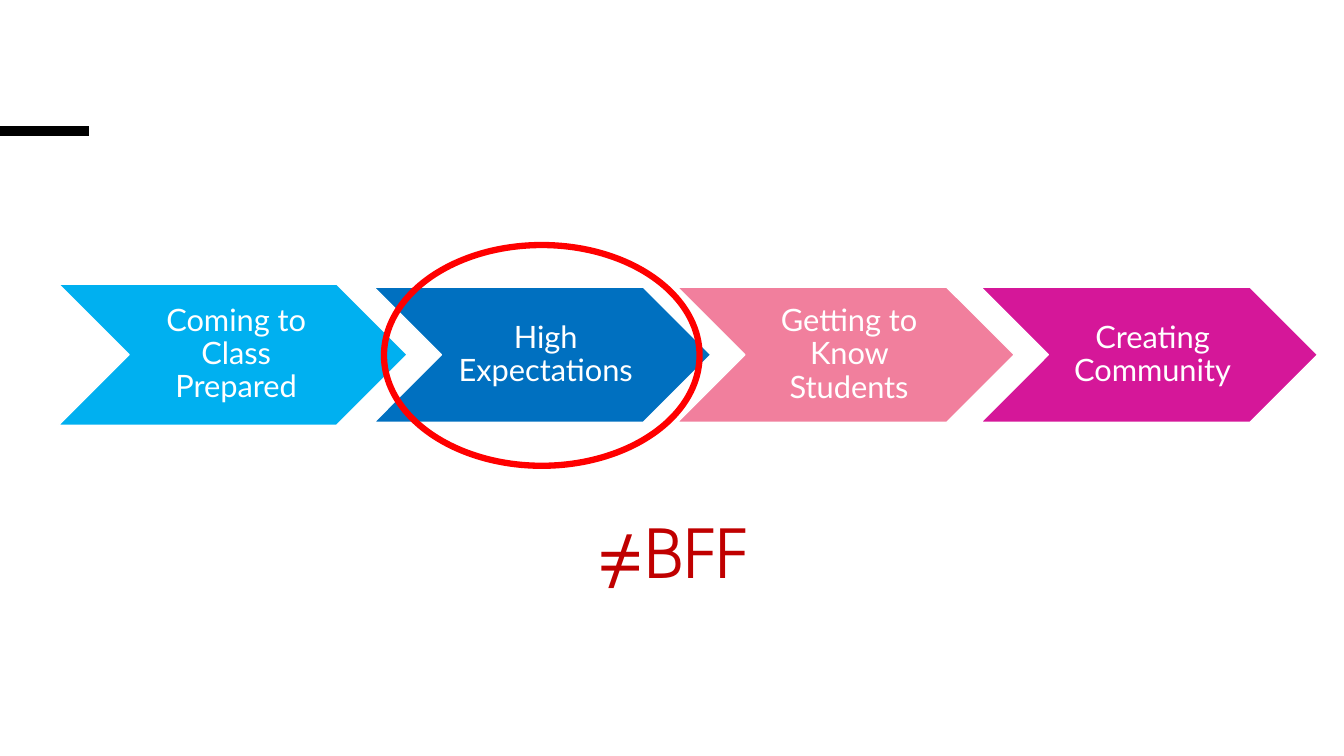
"""Builds a slide with four chevron steps, the second one circled."""
from lxml import etree
from pptx import Presentation
from pptx.dml.color import RGBColor
from pptx.enum import shapes, text
from pptx.oxml import ns
from pptx.util import Pt

BLACK = RGBColor(0x00, 0x00, 0x00)
WHITE = RGBColor(0xFF, 0xFF, 0xFF)
SKY = RGBColor(0x00, 0xB0, 0xF0)
BLUE = RGBColor(0x00, 0x70, 0xC0)
PINK = RGBColor(0xF1, 0x7F, 0x9D)
MAGENTA = RGBColor(0xD5, 0x17, 0x99)
RED = RGBColor(0xFF, 0x00, 0x00)
DARK_RED = RGBColor(0xC0, 0x00, 0x00)

STEPS = [
    ("Coming to Class Prepared", SKY),
    ("High Expectations", BLUE),
    ("Getting to Know Students", PINK),
    ("Creating Community", MAGENTA),
]
FIRST_LEFT, FIRST_WIDTH, FIRST_HEIGHT = 41.8, 249.1, 100.8
NEXT_LEFT, NEXT_WIDTH, NEXT_HEIGHT = 267.2, 240.6, 96.4
STEP_PITCH = 216.7
ROW_MIDDLE = 253.4


def style_paragraph(paragraph, wording, font_name, size, color):
    paragraph.text = wording
    paragraph.alignment = text.PP_ALIGN.CENTER
    paragraph.font.name = font_name
    paragraph.font.size = Pt(size)
    paragraph.font.color.rgb = color


def add_accent_rule(slide):
    rule = slide.shapes.add_connector(
        shapes.MSO_CONNECTOR.STRAIGHT, Pt(0), Pt(93.6), Pt(63.5), Pt(93.6))
    rule.line.color.rgb = BLACK
    rule.line.width = Pt(6.75)
    etree.SubElement(rule._element.spPr, ns.qn("a:effectLst"))


def add_step(slide, wording, color, left, width, height):
    step = slide.shapes.add_shape(
        shapes.MSO_SHAPE.CHEVRON, Pt(left), Pt(ROW_MIDDLE - height / 2),
        Pt(width), Pt(height))
    step.shadow.inherit = False
    step.fill.solid()
    step.fill.fore_color.rgb = color
    step.line.color.rgb = WHITE
    step.line.width = Pt(1)
    frame = step.text_frame
    frame.word_wrap = True
    frame.vertical_anchor = text.MSO_ANCHOR.MIDDLE
    frame.margin_left = Pt(7)
    frame.margin_top = frame.margin_right = frame.margin_bottom = Pt(2.3)
    label = frame.paragraphs[0]
    style_paragraph(label, wording, "Lato", 22, WHITE)
    label.line_spacing = 0.9


def add_highlight(slide):
    ring = slide.shapes.add_shape(
        shapes.MSO_SHAPE.OVAL, Pt(274.3), Pt(175), Pt(225.4), Pt(157.7))
    ring.shadow.inherit = False
    ring.fill.background()
    ring.line.color.rgb = RED
    ring.line.width = Pt(4.5)


def add_remark(slide):
    remark = slide.shapes.add_textbox(Pt(393.1), Pt(361.4), Pt(174.2), Pt(65.5))
    frame = remark.text_frame
    frame.word_wrap = True
    frame.auto_size = text.MSO_AUTO_SIZE.SHAPE_TO_FIT_TEXT
    style_paragraph(frame.paragraphs[0], "≠BFF", "TeX Gyre Adventor", 48, DARK_RED)


def main():
    deck = Presentation()
    deck.slide_width, deck.slide_height = Pt(960), Pt(540)
    slide = deck.slides.add_slide(deck.slide_layouts.get_by_name("Blank"))
    add_accent_rule(slide)
    add_step(slide, *STEPS[0], FIRST_LEFT, FIRST_WIDTH, FIRST_HEIGHT)
    for index, (wording, color) in enumerate(STEPS[1:]):
        add_step(slide, wording, color, NEXT_LEFT + index * STEP_PITCH,
                 NEXT_WIDTH, NEXT_HEIGHT)
    add_remark(slide)
    add_highlight(slide)
    deck.save("out.pptx")


if __name__ == "__main__":
    main()
